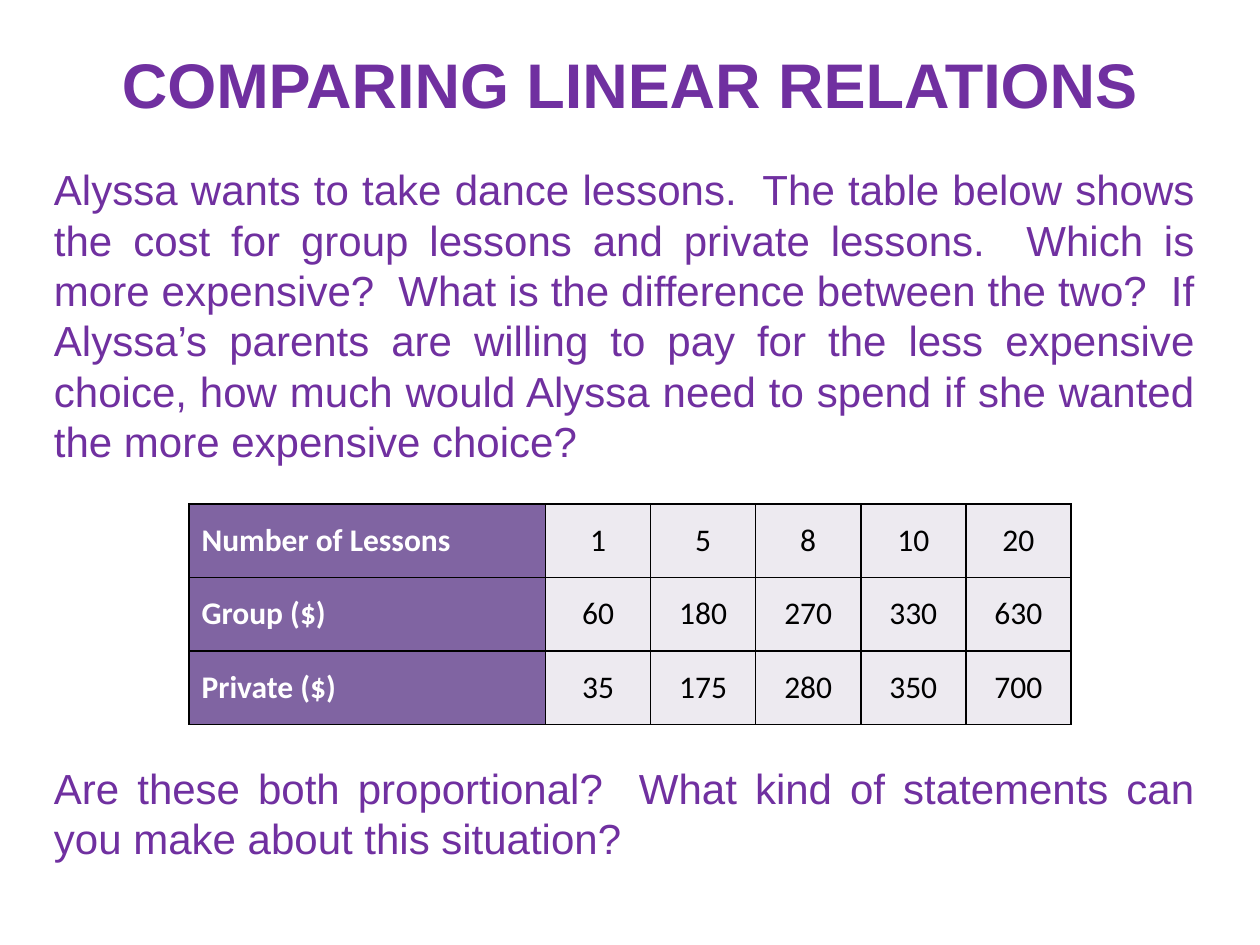
from dataclasses import dataclass
from lxml.etree import SubElement as Sub
from pptx import Presentation as Deck
from pptx.dml.color import RGBColor as Rgb
from pptx.enum.text import MSO_ANCHOR as Anchor, PP_ALIGN as Align
from pptx.oxml.ns import qn
from pptx.util import Inches, Pt


@dataclass(frozen=True)
class Theme:
    purple: str = "7030A0"
    head: str = "8064A2"
    pale: str = "EDEAF0"
    white: str = "FFFFFF"
    black: str = "000000"
    sans: str = "Arial"
    grid: str = "Calibri"
    title: int = 36
    body: int = 24
    cell: int = 18


@dataclass(frozen=True)
class Font:
    face: str
    size: int
    color: str
    bold: bool = False


@dataclass(frozen=True)
class Block:
    text: str
    left: float
    top: float
    width: float
    height: float
    font: Font
    align: Align
    anchor: Anchor = Anchor.TOP
    before: float = 0


@dataclass(frozen=True)
class Row:
    label: str
    costs: tuple


THEME = Theme()
TITLE = Font(THEME.sans, THEME.title, THEME.purple, True)
BODY = Font(THEME.sans, THEME.body, THEME.purple)
LABEL = Font(THEME.grid, THEME.cell, THEME.white, True)
COST = Font(THEME.grid, THEME.cell, THEME.black)

STORY = (
    "Alyssa wants to take dance lessons.  The table below shows the cost for "
    "group lessons and private lessons.  Which is more expensive?  What is the "
    "difference between the two?  If Alyssa’s parents are willing to pay for "
    "the less expensive choice, how much would Alyssa need to spend if she "
    "wanted the more expensive choice?"
)
PROMPT = (
    "Are these both proportional?  What kind of statements can you make "
    "about this situation?"
)

BLOCKS = (
    Block("COMPARING LINEAR RELATIONS", 0, 0.25, 10, 0.83, TITLE,
          Align.CENTER, Anchor.MIDDLE),
    Block(STORY, 0.33, 1.25, 9.25, 2.67, BODY, Align.JUSTIFY, before=4.8),
    Block(PROMPT, 0.33, 6, 9.25, 1.17, BODY, Align.JUSTIFY, before=4.8),
)
ROWS = (
    Row("Number of Lessons", (1, 5, 8, 10, 20)),
    Row("Group ($)", (60, 180, 270, 330, 630)),
    Row("Private ($)", (35, 175, 280, 350, 700)),
)


def write(frame, text: str, font: Font, align: Align, before: float = 0) -> None:
    para = frame.paragraphs[0]
    para.alignment = align
    if before:
        para.space_before = Pt(before)
    run = para.add_run()
    run.text = text
    run.font.name = font.face
    run.font.size = Pt(font.size)
    run.font.bold = font.bold
    run.font.color.rgb = Rgb.from_string(font.color)


def add_block(slide, block: Block) -> None:
    box = slide.shapes.add_textbox(
        Inches(block.left), Inches(block.top),
        Inches(block.width), Inches(block.height))
    frame = box.text_frame
    frame.word_wrap = True
    frame.vertical_anchor = block.anchor
    write(frame, block.text, block.font, block.align, block.before)


def add_edges(cell) -> None:
    props = cell._tc.get_or_add_tcPr()
    for at, side in enumerate(("lnL", "lnR", "lnT", "lnB")):
        line = props.makeelement(qn(f"a:{side}"), {"w": str(Pt(1))})
        fill = Sub(line, qn("a:solidFill"))
        Sub(fill, qn("a:srgbClr"), val=THEME.black)
        props.insert(at, line)


def fill_cell(cell, text: str, font: Font, align: Align, color: str) -> None:
    cell.fill.solid()
    cell.fill.fore_color.rgb = Rgb.from_string(color)
    cell.vertical_anchor = Anchor.MIDDLE
    write(cell.text_frame, text, font, align)
    add_edges(cell)


def add_costs(slide, rows: tuple) -> None:
    width, height, first = 7, 1.75, 2.83
    count = len(rows[0].costs)
    table = slide.shapes.add_table(
        len(rows), count + 1, Inches(1.5), Inches(4),
        Inches(width), Inches(height)).table
    for at, col in enumerate(table.columns):
        col.width = Inches((width - first) / count if at else first)
    for at, row in enumerate(rows):
        table.rows[at].height = Inches(height / len(rows))
        fill_cell(table.cell(at, 0), row.label, LABEL, Align.LEFT, THEME.head)
        for col, cost in enumerate(row.costs, 1):
            fill_cell(table.cell(at, col), str(cost), COST,
                      Align.CENTER, THEME.pale)


def main() -> None:
    deck = Deck()
    deck.slide_width = Inches(10)
    deck.slide_height = Inches(7.5)
    slide = deck.slides.add_slide(deck.slide_layouts[6])
    title, story, prompt = BLOCKS
    add_block(slide, title)
    add_block(slide, story)
    add_costs(slide, ROWS)
    add_block(slide, prompt)
    deck.save("out.pptx")


if __name__ == "__main__":
    main()
